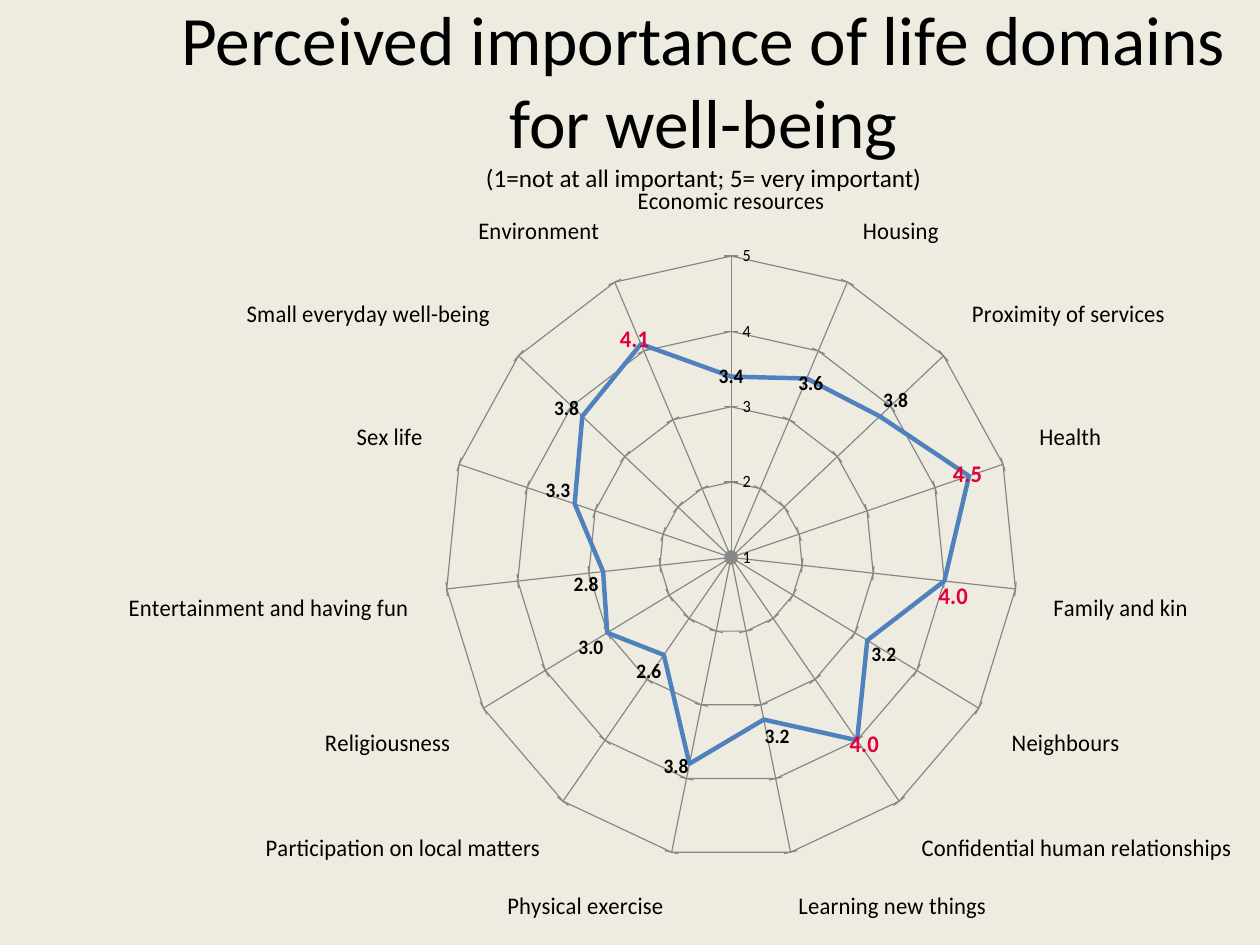
"""Build a slide with a radar chart of how important life domains are for well-being."""
from pptx import Presentation
from pptx.chart.data import CategoryChartData
from pptx.dml.color import RGBColor
from pptx.enum.chart import XL_CHART_TYPE, XL_TICK_MARK
from pptx.enum.text import MSO_ANCHOR, PP_ALIGN
from pptx.oxml import parse_xml
from pptx.oxml.ns import nsdecls, qn
from pptx.util import Inches, Pt

BLACK = RGBColor(0x00, 0x00, 0x00)
CREAM = RGBColor(0xEE, 0xEC, 0xE1)
BLUE = RGBColor(0x4F, 0x81, 0xBD)
GRAY = RGBColor(0x87, 0x87, 0x87)
RED = RGBColor(0xE4, 0x00, 0x3C)
FONT = "Calibri"

SCORES = {
    "Economic resources": 3.4,
    "Housing": 3.6,
    "Proximity of services": 3.8,
    "Health": 4.5,
    "Family and kin": 4.0,
    "Neighbours": 3.2,
    "Confidential human relationships": 4.0,
    "Learning new things": 3.2,
    "Physical exercise": 3.8,
    "Participation on local matters": 2.6,
    "Religiousness": 3.0,
    "Entertainment and having fun": 2.8,
    "Sex life": 3.3,
    "Small everyday well-being": 3.8,
    "Environment": 4.1,
}
SHIFTS = {
    "Economic resources": (0, 0.03),
    "Housing": (-0.01, 0.03),
    "Health": (-0.02, 0.02),
    "Family and kin": (-0.01, 0),
    "Confidential human relationships": (-0.01, -0.02),
    "Physical exercise": (0, -0.02),
    "Small everyday well-being": (0, 0.01),
    "Environment": (0.01, 0.02),
}


def layout(head, **parts):
    tags = "".join(f'<c:{key} val="{val}"/>' for key, val in parts.items())
    return parse_xml(
        f'<c:layout {nsdecls("c")}><c:manualLayout>{head}{tags}</c:manualLayout></c:layout>'
    )


def style(font, size, color=BLACK, bold=False):
    font.name = FONT
    font.size = Pt(size)
    font.bold = bold
    font.color.rgb = color


prs = Presentation()
prs.slide_width, prs.slide_height = Inches(10), Inches(7.5)
slide = prs.slides.add_slide(prs.slide_layouts[6])
slide.background.fill.solid()
slide.background.fill.fore_color.rgb = CREAM

data = CategoryChartData(number_format="0.0")
data.categories = list(SCORES)
data.add_series("Series 1", list(SCORES.values()))
chart = slide.shapes.add_chart(
    XL_CHART_TYPE.RADAR, Inches(1.02), Inches(1.48), Inches(8.84), Inches(5.83), data
).chart
chart.has_title = False
chart.has_legend = False
style(chart.font, 10)

area = chart._chartSpace.find(qn("c:chart")).find(qn("c:plotArea"))
for old in area.findall(qn("c:layout")):
    area.remove(old)
head = '<c:layoutTarget val="inner"/><c:xMode val="edge"/><c:yMode val="edge"/>'
area.insert(0, layout(head, x=0.225, y=0.095, w=0.556, h=0.844))

cats, vals = chart.category_axis, chart.value_axis
style(cats.tick_labels.font, 14)
cats.major_tick_mark = XL_TICK_MARK.OUTSIDE
style(vals.tick_labels.font, 10)
vals.tick_labels.number_format = "0"
vals.tick_labels.number_format_is_linked = False
vals.major_tick_mark = XL_TICK_MARK.CROSS
vals.minimum_scale, vals.maximum_scale, vals.major_unit = 1, 5, 1
for axis in (cats, vals):
    axis.has_major_gridlines = True
    for line in (axis.format.line, axis.major_gridlines.format.line):
        line.color.rgb = GRAY
        line.width = Pt(0.75)

series = chart.plots[0].series[0]
series.smooth = False
series.format.line.color.rgb = BLUE
series.format.line.width = Pt(2.75)
labels = series.data_labels
labels.show_value = True
labels.number_format = "0.0"
labels.number_format_is_linked = False
style(labels.font, 12, bold=True)

for spot, (name, score) in enumerate(SCORES.items()):
    if name not in SHIFTS:
        continue
    top = score >= 4
    font = series.points[spot].data_label.font
    style(font, 14 if top else 12, RED if top else BLACK, True)
    label = labels._element.findall(qn("c:dLbl"))[-1]
    x, y = SHIFTS[name]
    label.insert(1, layout("", x=x, y=y))
    label.insert(2, parse_xml(
        f'<c:numFmt {nsdecls("c")} formatCode="0.0" sourceLinked="0"/>'
    ))

box = slide.shapes.add_textbox(Inches(1.17), Inches(0.17), Inches(8.83), Inches(1.16))
frame = box.text_frame
frame.word_wrap = True
frame.vertical_anchor = MSO_ANCHOR.MIDDLE
frame.text = (
    "Perceived importance of life domains for well-being\v"
    "(1=not at all important; 5= very important)"
)
para = frame.paragraphs[0]
para.alignment = PP_ALIGN.CENTER
for run, size in zip(para.runs, (39.6, 14.4)):
    style(run.font, size)

prs.save("out.pptx")
